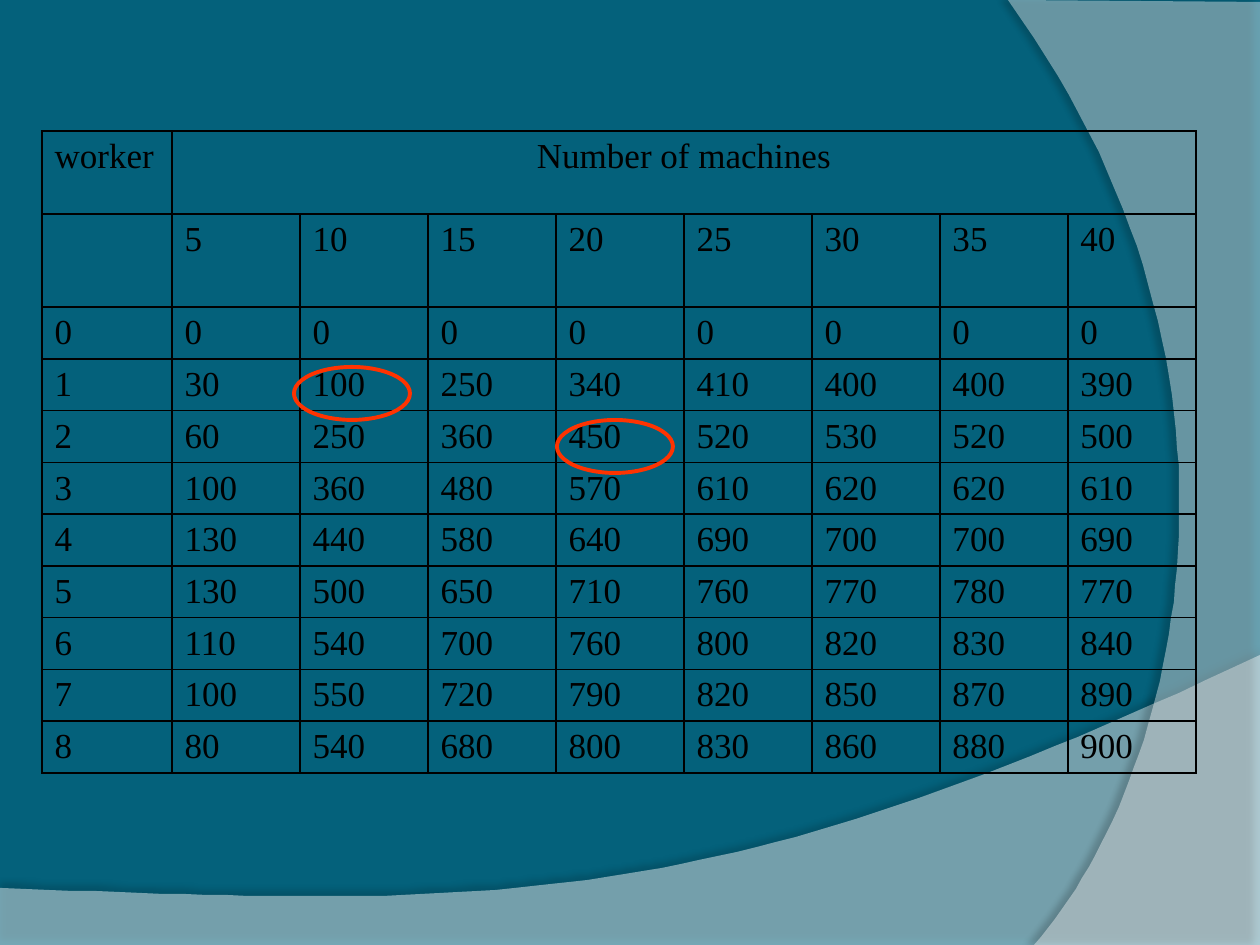
from lxml.etree import SubElement
from pptx import Presentation
from pptx.dml.color import RGBColor
from pptx.enum.shapes import MSO_SHAPE
from pptx.enum.text import PP_ALIGN
from pptx.oxml import parse_xml
from pptx.oxml.ns import nsdecls, qn
from pptx.util import Pt

SCALE = 914400 / 126
COLORS = {"back": "04617B", "wave": "FFFFFF", "ink": "000000", "mark": "FF3300"}
FONT = "Times New Roman"

COLUMNS = [130] + [128] * 8
ROWS = [83, 93] + [52, 51] * 4 + [52]
MACHINES = range(5, 45, 5)
OUTPUT = [
    [0, 0, 0, 0, 0, 0, 0, 0],
    [30, 100, 250, 340, 410, 400, 400, 390],
    [60, 250, 360, 450, 520, 530, 520, 500],
    [100, 360, 480, 570, 610, 620, 620, 610],
    [130, 440, 580, 640, 690, 700, 700, 690],
    [130, 500, 650, 710, 760, 770, 780, 770],
    [110, 540, 700, 760, 800, 820, 830, 840],
    [100, 550, 720, 790, 820, 850, 870, 890],
    [80, 540, 680, 800, 830, 860, 880, 900],
]


def px(n):
    return round(n * SCALE)


def rgb(name):
    return RGBColor.from_string(COLORS[name])


def bezier(a, b, c, d, steps=60):
    for i in range(1, steps + 1):
        t = i / steps
        u = 1 - t
        yield tuple(
            u**3 * e + 3 * u * u * t * f + 3 * u * t * t * g + t**3 * h
            for e, f, g, h in zip(a, b, c, d)
        )


class Deck:
    def __init__(self, width, height):
        self.prs = Presentation()
        self.prs.slide_width, self.prs.slide_height = px(width), px(height)
        self.s = self.prs.slides.add_slide(self.prs.slide_layouts[6])
        fill = self.s.background.fill
        fill.solid()
        fill.fore_color.rgb = rgb("back")

    def wave(self, points, alpha, shade, distance, angle):
        builder = self.s.shapes.build_freeform(*points[0], scale=SCALE)
        builder.add_line_segments(points[1:], close=True)
        sp = builder.convert_to_shape()
        sp.fill.solid()
        sp.fill.fore_color.rgb = rgb("wave")
        sp.line.fill.background()
        color = sp.fill._xPr.find(qn("a:solidFill"))[0]
        SubElement(color, qn("a:alpha"), val=str(alpha * 1000))
        sp._element.spPr.append(parse_xml(
            f'<a:effectLst {nsdecls("a")}><a:outerShdw blurRad="{Pt(4)}" '
            f'dist="{Pt(distance)}" dir="{angle * 60000}" rotWithShape="0">'
            f'<a:srgbClr val="{COLORS["ink"]}"><a:alpha val="{shade * 1000}"/>'
            f'</a:srgbClr></a:outerShdw></a:effectLst>'))

    def table(self, x, y, columns, rows, values):
        frame = self.s.shapes.add_table(
            len(rows), len(columns), px(x), px(y), px(sum(columns)), px(sum(rows)))
        table = frame.table
        table.first_row = table.horz_banding = False
        for column, width in zip(table.columns, columns):
            column.width = px(width)
        for row, height, texts in zip(table.rows, rows, values):
            row.height = px(height)
            for cell, text in zip(row.cells, texts):
                self.cell(cell, str(text))
        return table

    def cell(self, cell, text):
        cell.fill.background()
        tcPr = cell._tc.get_or_add_tcPr()
        for i, side in enumerate("LRTB"):
            tcPr.insert(i, parse_xml(
                f'<a:ln{side} {nsdecls("a")} w="{Pt(1)}"><a:solidFill>'
                f'<a:srgbClr val="{COLORS["ink"]}"/></a:solidFill></a:ln{side}>'))
        p = cell.text_frame.paragraphs[0]
        if text:
            p.text = text
        p.font.size, p.font.name = Pt(20), FONT
        p.font.color.rgb = rgb("ink")
        pPr = p._p.get_or_add_pPr()
        pPr.set("marL", str(px(48)))
        pPr.set("indent", str(-px(48)))

    def ring(self, x, y, width, height):
        sp = self.s.shapes.add_shape(
            MSO_SHAPE.OVAL, px(x), px(y), px(width), px(height))
        sp.shadow.inherit = False
        sp.fill.background()
        sp.line.color.rgb = rgb("mark")
        sp.line.width = Pt(2.25)


def main():
    deck = Deck(1260, 945)
    deck.wave([(0, 888), (0, 946), (1260, 946), (1260, 655),
               *bezier((1260, 655), (704, 919), (493, 906), (0, 888))],
              45, 35, 3.5, 270)
    deck.wave([(1260, 2), (1260, 945), (1034, 945),
               *bezier((1034, 945), (1178, 780), (1283, 378), (1008, 0))],
              40, 45, 4, 180)
    values = [["worker", "Number of machines"] + [""] * 7, ["", *MACHINES]]
    values += [[workers, *row] for workers, row in enumerate(OUTPUT)]
    table = deck.table(42, 131, COLUMNS, ROWS, values)
    table.cell(0, 1).merge(table.cell(0, 8))
    table.cell(0, 1).text_frame.paragraphs[0].alignment = PP_ALIGN.CENTER
    for x, y in ((294, 367), (557, 420)):
        deck.ring(x, y, 116, 53)
    deck.prs.save("out.pptx")


if __name__ == "__main__":
    main()
